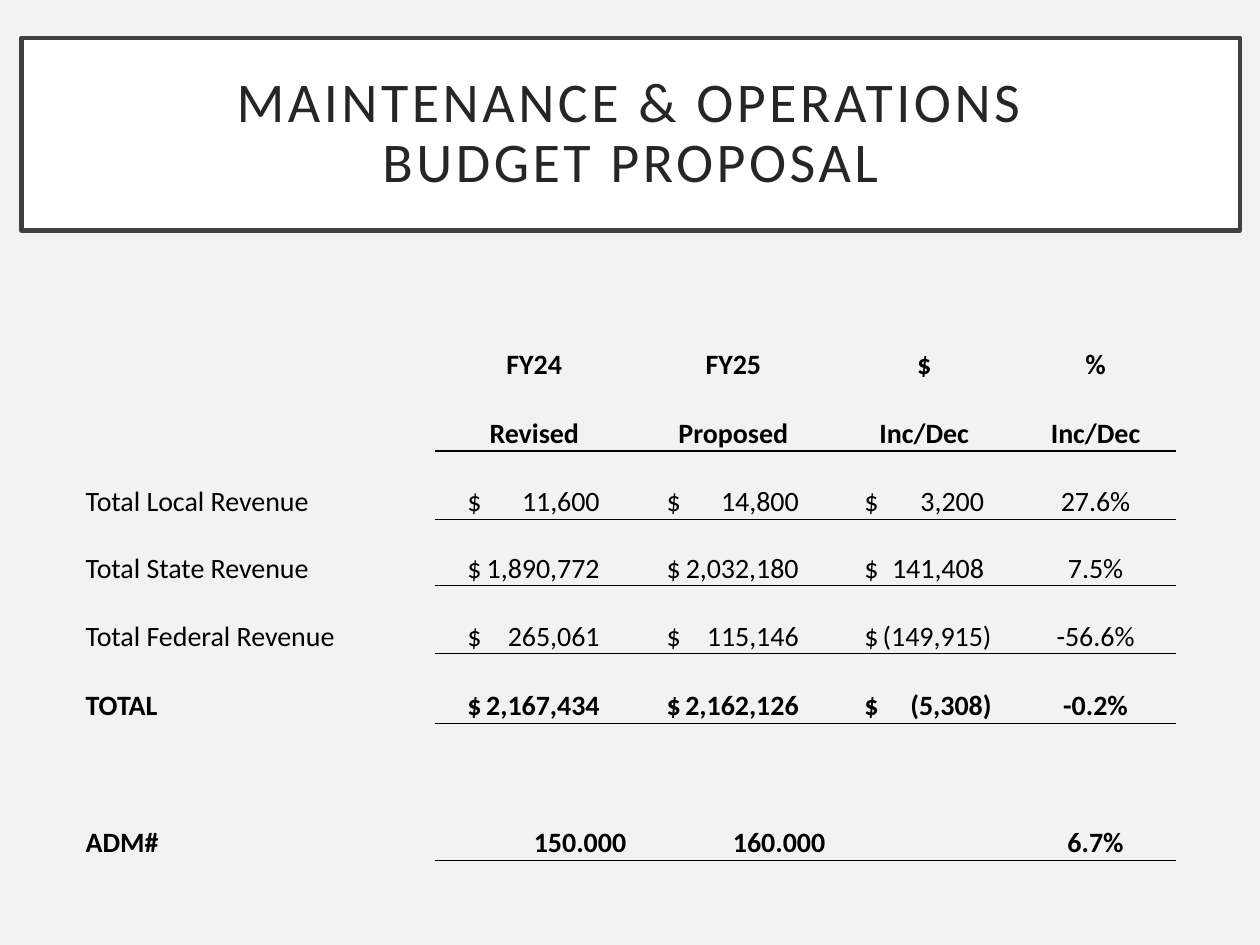
"""Build the maintenance and operations budget proposal slide."""
from dataclasses import dataclass

import lxml.etree
import pptx
import pptx.dml.color
import pptx.enum.shapes
import pptx.enum.text
import pptx.oxml
import pptx.oxml.ns
import pptx.util

Inches = pptx.util.Inches
Pt = pptx.util.Pt
ALIGN = pptx.enum.text.PP_ALIGN
ANCHOR = pptx.enum.text.MSO_ANCHOR
qn = pptx.oxml.ns.qn

NO_STYLE = "{2D5ABB26-0587-4C30-8999-92F81FD0307C}"
HANGING_PARENTHESIS = 0.06


@dataclass(frozen=True)
class Column:
    width: float
    amount_start: float = 0.01
    amount_end: float = 0


@dataclass(frozen=True)
class BudgetRow:
    height: float
    values: tuple[str, ...]
    bold: bool = False
    rule: float = 0


COLUMNS = (
    Column(2.78),
    Column(1.58, 0.26, 1.31),
    Column(1.58, 0.26, 1.31),
    Column(1.45, 0.25, 1.2),
    Column(1.27),
)
BUDGET = (
    BudgetRow(0.53, ("", "FY24", "FY25", "$", "%"), bold=True),
    BudgetRow(0.55, ("", "Revised", "Proposed", "Inc/Dec", "Inc/Dec"), bold=True, rule=1),
    BudgetRow(0.54, ("Total Local Revenue", "$\t11,600", "$\t14,800", "$\t3,200", "27.6%"), rule=0.5),
    BudgetRow(0.53, ("Total State Revenue", "$\t1,890,772", "$\t2,032,180", "$\t141,408", "7.5%"), rule=0.5),
    BudgetRow(0.54, ("Total Federal Revenue", "$\t265,061", "$\t115,146", "$\t(149,915)", "-56.6%"), rule=0.5),
    BudgetRow(0.55, ("TOTAL", "$\t2,167,434", "$\t2,162,126", "$\t(5,308)", "-0.2%"), bold=True, rule=0.5),
    BudgetRow(0.55, ("", "", "", "", "")),
    BudgetRow(0.54, ("ADM#", "150.000", "160.000", "", "6.7%"), bold=True, rule=0.5),
)


def color(hex_code: str) -> pptx.dml.color.RGBColor:
    return pptx.dml.color.RGBColor.from_string(hex_code)


def write(frame, text: str, *, size: float, ink: str, bold: bool = False,
          align=ALIGN.CENTER, line_spacing: float = 1, tracking: float = 0):
    paragraph = frame.paragraphs[0]
    paragraph.text = text
    paragraph.alignment = align
    paragraph.line_spacing = line_spacing
    for run in paragraph.runs:
        run.font.name = "Calibri"
        run.font.size = Pt(size)
        run.font.bold = bold
        run.font.color.rgb = color(ink)
        if tracking:
            run.font._element.set("spc", str(int(tracking * 100)))
    return paragraph


def add_right_tab(paragraph, position: float) -> None:
    tabs = lxml.etree.SubElement(paragraph._p.get_or_add_pPr(), qn("a:tabLst"))
    lxml.etree.SubElement(tabs, qn("a:tab"), pos=str(Inches(position)), algn="r")


def add_rule(cell, width: float) -> None:
    rule = pptx.oxml.parse_xml(
        f'<a:lnB xmlns:a="{pptx.oxml.ns.nsdecls("a").split(chr(34))[1]}" w="{Pt(width)}">'
        '<a:solidFill><a:srgbClr val="000000"/></a:solidFill></a:lnB>'
    )
    cell._tc.get_or_add_tcPr().insert(0, rule)


def fill_cell(cell, text: str, column: Column, bold: bool, is_label: bool) -> None:
    is_amount = "\t" in text
    is_count = text.endswith(".000")
    cell.vertical_anchor = ANCHOR.BOTTOM
    cell.margin_left = Inches(column.amount_start if is_amount else 0.01)
    cell.margin_right = Inches(0.06 if is_count else 0.01)
    cell.margin_top = Inches(0.01)
    cell.margin_bottom = 0
    align = ALIGN.RIGHT if is_count else ALIGN.LEFT if is_label or is_amount else ALIGN.CENTER
    paragraph = write(cell.text_frame, text, size=16, ink="000000", bold=bold, align=align)
    if is_amount:
        hang = HANGING_PARENTHESIS if text.endswith(")") else 0
        add_right_tab(paragraph, column.amount_end + hang - column.amount_start)


def add_title(slide) -> None:
    title = slide.shapes.add_shape(
        pptx.enum.shapes.MSO_SHAPE.RECTANGLE, Inches(0.17), Inches(0.3), Inches(9.67), Inches(1.53))
    title.shadow.inherit = False
    title.fill.solid()
    title.fill.fore_color.rgb = color("FFFFFF")
    title.line.color.rgb = color("404040")
    title.line.width = Pt(2.5)
    frame = title.text_frame
    frame.word_wrap = True
    frame.vertical_anchor = ANCHOR.MIDDLE
    frame.margin_left = frame.margin_right = frame.margin_top = frame.margin_bottom = Inches(0.2)
    write(frame, "MAINTENANCE & OPERATIONS\vBUDGET PROPOSAL",
          size=32, ink="262626", line_spacing=0.9, tracking=2)


def add_budget(slide) -> None:
    budget = slide.shapes.add_table(
        len(BUDGET), len(COLUMNS), Inches(0.67), Inches(2.5),
        Inches(sum(column.width for column in COLUMNS)),
        Inches(sum(row.height for row in BUDGET))).table
    budget.first_row = budget.horz_banding = False
    budget._tbl.tblPr.find(qn("a:tableStyleId")).text = NO_STYLE
    for index, column in enumerate(COLUMNS):
        budget.columns[index].width = Inches(column.width)
    for row_index, row in enumerate(BUDGET):
        budget.rows[row_index].height = Inches(row.height)
        for index, (text, column) in enumerate(zip(row.values, COLUMNS)):
            cell = budget.cell(row_index, index)
            cell.fill.background()
            if text:
                fill_cell(cell, text, column, row.bold, index == 0)
            if row.rule and index > 0:
                add_rule(cell, row.rule)


def main() -> None:
    deck = pptx.Presentation()
    deck.slide_width, deck.slide_height = Inches(10), Inches(7.5)
    slide = deck.slides.add_slide(deck.slide_layouts[6])
    slide.background.fill.solid()
    slide.background.fill.fore_color.rgb = color("F2F2F2")
    add_title(slide)
    add_budget(slide)
    deck.save("out.pptx")


if __name__ == "__main__":
    main()
